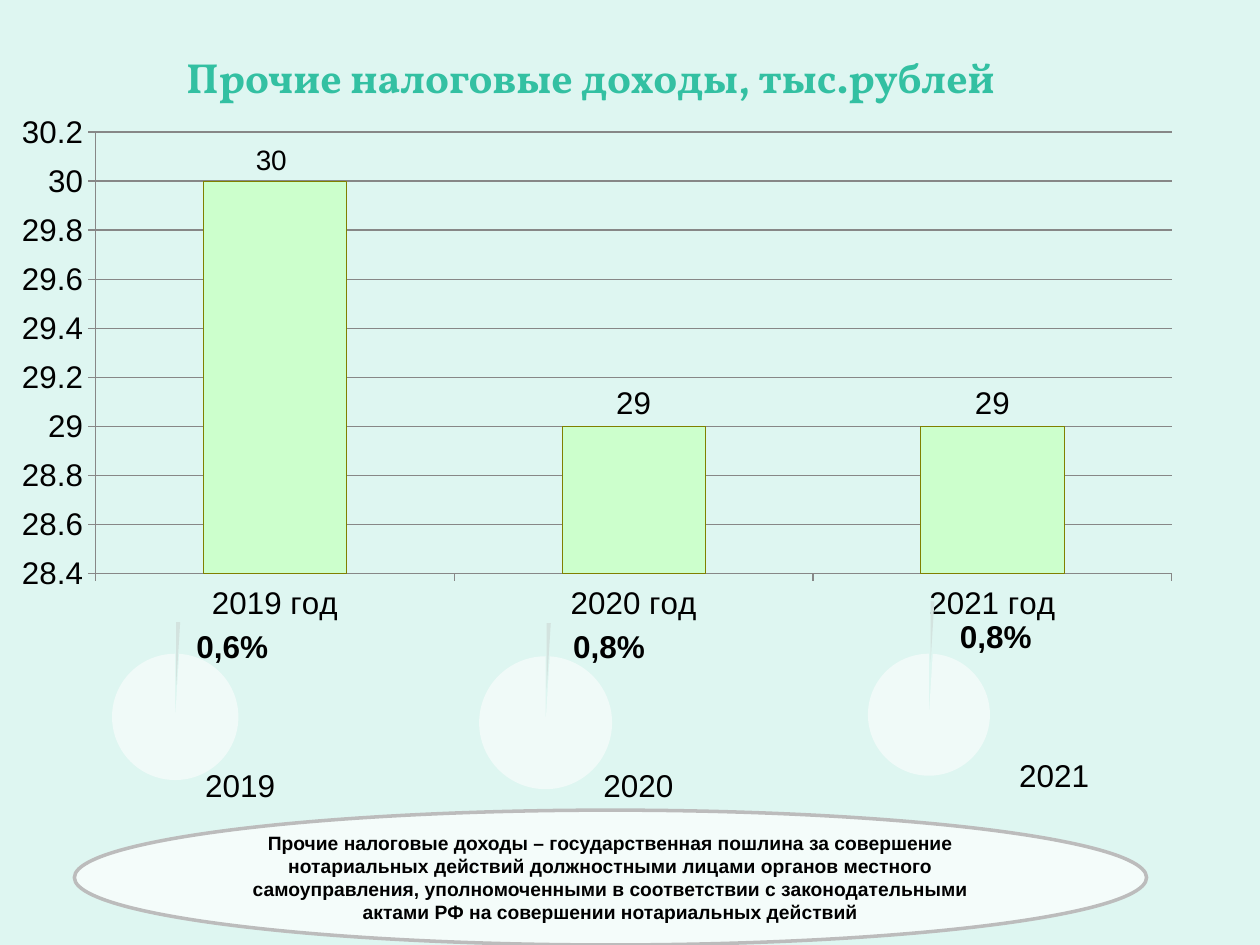
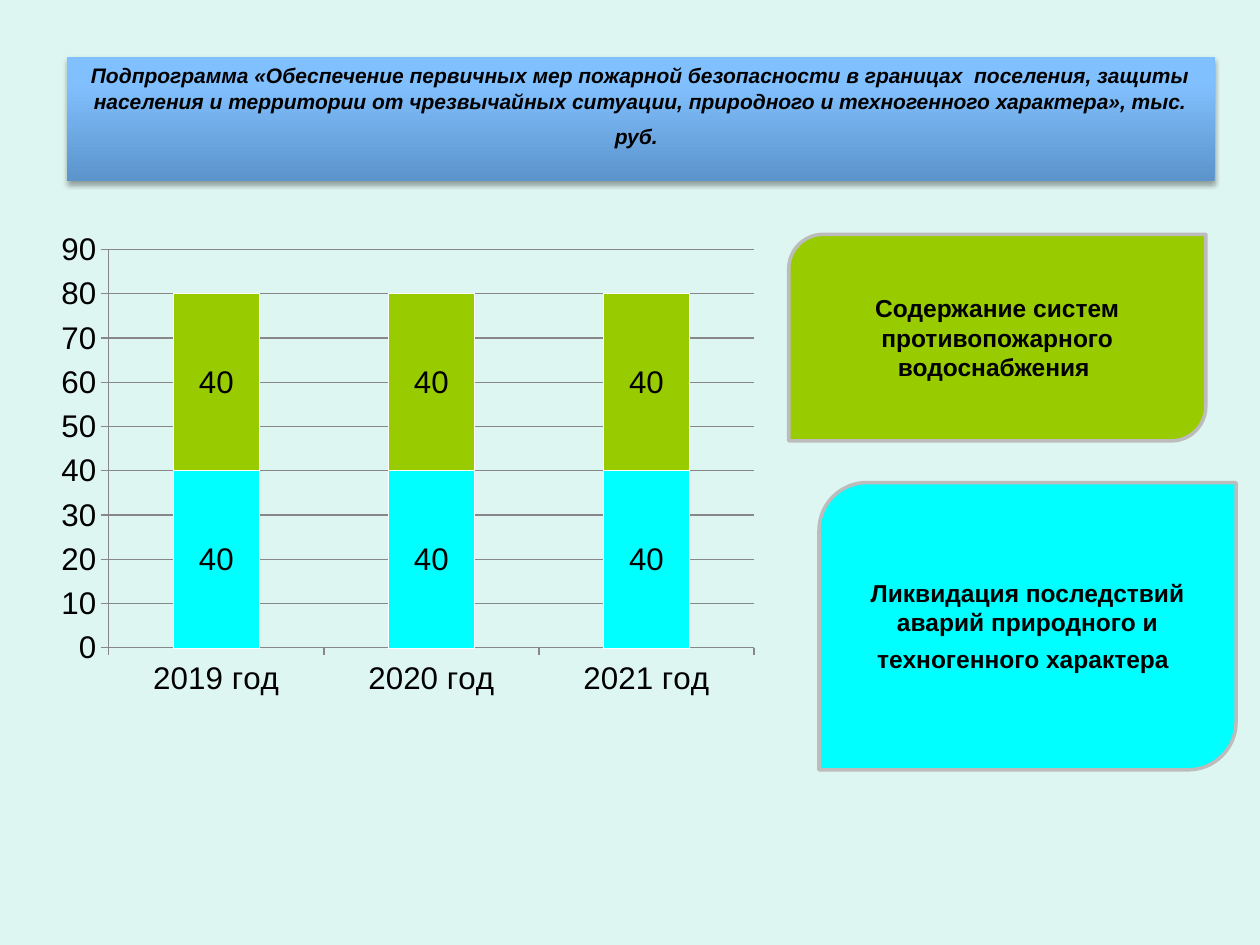
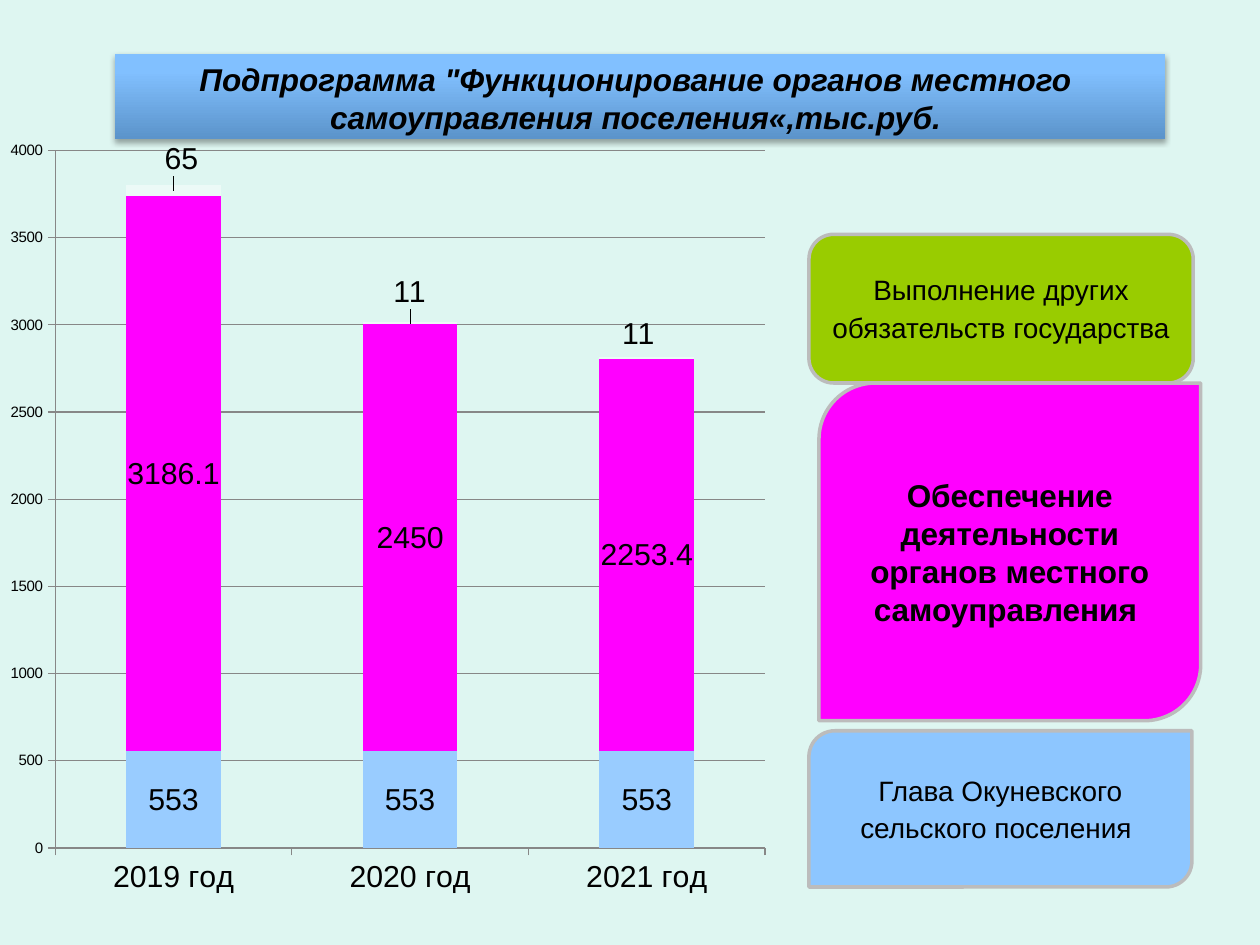
import lxml.etree
import pptx
import pptx.chart.data
import pptx.dml.color
import pptx.enum.chart
import pptx.enum.shapes
import pptx.enum.text
import pptx.oxml
import pptx.oxml.ns
import pptx.util

deck = pptx.Presentation()
deck.slide_width = pptx.util.Inches(10)
deck.slide_height = pptx.util.Inches(7.5)
column = deck.slide_width / 100
row = deck.slide_height / 75


def colour(code):
    return pptx.dml.color.RGBColor.from_string(code)


def place(left, top, width, height):
    return [int(left * column), int(top * row), int(width * column), int(height * row)]


qn = pptx.oxml.ns.qn
shapes = pptx.enum.shapes.MSO_SHAPE
align = pptx.enum.text.PP_ALIGN
anchor = pptx.enum.text.MSO_ANCHOR
chart_type = pptx.enum.chart.XL_CHART_TYPE
label_position = pptx.enum.chart.XL_LABEL_POSITION

BLACK, MINT, TEAL, WHITE = "000000", "DEF6F1", "33C0A2", "FFFFFF"
LIME, CYAN, MAGENTA, SKY = "99CC00", "00FFFF", "FF00FF", "8DC6FF"
BORDER, GRID = "BCBCBC", "878787"
YEARS = ["2019 год", "2020 год", "2021 год"]

background = deck.slide_master.background.fill
background.solid()
background.fore_color.rgb = colour(MINT)
other_taxes, fire_safety, local_government = [
    deck.slides.add_slide(deck.slide_layouts[6]) for _ in range(3)
]

column_charts = [
    dict(slide=other_taxes, area=(0, 8.4, 94.9, 41.7), kind=chart_type.COLUMN_CLUSTERED,
         plot=(0.08, 0.05, 0.9, 0.84), scale=(28.4, 30.2, 0.2), size=17.9, value_size=17.9,
         overlap=0, label=label_position.OUTSIDE_END,
         series=[([30, 29, 29], "CCFFCC", "808000")]),
    dict(slide=fire_safety, area=(0, 17.5, 61.7, 57.5), kind=chart_type.COLUMN_STACKED,
         plot=(0.14, 0.04, 0.83, 0.55), scale=(0, 90, 10), size=17.9, value_size=17.9,
         overlap=100, label=label_position.CENTER,
         series=[([40, 40, 40], CYAN, WHITE), ([40, 40, 40], LIME, WHITE)]),
    dict(slide=local_government, area=(0, 10.7, 62.6, 62.2), kind=chart_type.COLUMN_STACKED,
         plot=(0.07, 0.02, 0.9, 0.89), scale=(0, 4000, 500), size=17.3, value_size=8.6,
         overlap=100, label=label_position.CENTER,
         series=[([553, 553, 553], "99CCFF", None),
                 ([3186.1, 2450, 2253.4], MAGENTA, None),
                 ([65, 11, 11], "ECFAF7", None)]),
]
pie_charts = [
    dict(slide=other_taxes, area=area, kind=chart_type.PIE, size=18, explosion=explosion,
         plot=(0.5 - 0.41 * area[3] / area[2], 0.09, 0.82 * area[3] / area[2], 0.82))
    for area, explosion in [((-0.6, 48, 29.1, 15.3), 25),
                            ((24.3, 48, 38.1, 16.1), 25),
                            ((50.8, 46.2, 46, 16.9), 43)]
]

for spec in column_charts + pie_charts:
    is_pie = spec["kind"] == chart_type.PIE
    figures = pptx.chart.data.CategoryChartData()
    figures.categories = ["1", "2"] if is_pie else YEARS
    for number, values in enumerate([[1, 99]] if is_pie else [s[0] for s in spec["series"]], 1):
        figures.add_series(f"Series {number}", values)
    chart = spec["slide"].shapes.add_chart(spec["kind"], *place(*spec["area"]), figures).chart
    chart.has_legend = False
    chart.has_title = False
    for name, value in dict(name="Arial", size=pptx.util.Pt(spec["size"])).items():
        setattr(chart.font, name, value)
    chart.font.color.rgb = colour(BLACK)

    plot_area = chart.element.find(".//" + qn("c:plotArea"))
    for old_layout in plot_area.findall(qn("c:layout")):
        plot_area.remove(old_layout)
    layout = lxml.etree.Element(qn("c:layout"))
    manual = lxml.etree.SubElement(layout, qn("c:manualLayout"))
    for tag, value in zip(["layoutTarget", "xMode", "yMode", "x", "y", "w", "h"],
                          ["inner", "edge", "edge", *spec["plot"]]):
        lxml.etree.SubElement(manual, qn("c:" + tag)).set("val", str(value))
    plot_area.insert(0, layout)

    bars = chart.plots[0]
    bars.vary_by_categories = is_pie
    if is_pie:
        share = bars.series[0]
        for index, code in enumerate(["D3E3DF", "F0FAF8"]):
            wedge = share.points[index].format
            wedge.fill.solid()
            wedge.fill.fore_color.rgb = colour(code)
            wedge.line.fill.background()
        explosion = lxml.etree.Element(qn("c:explosion"))
        explosion.set("val", str(spec["explosion"]))
        chart.element.find(".//" + qn("c:dPt")).addprevious(explosion)
        continue

    bars.gap_width = 150
    bars.overlap = spec["overlap"]
    for series, (_, fill, outline) in zip(bars.series, spec["series"]):
        series.format.fill.solid()
        series.format.fill.fore_color.rgb = colour(fill)
        if outline:
            series.format.line.color.rgb = colour(outline)
            series.format.line.width = pptx.util.Pt(0.25)
        else:
            series.format.line.fill.background()
        for name, value in dict(show_value=True, position=spec["label"]).items():
            setattr(series.data_labels, name, value)
    low, high, step = spec["scale"]
    value_axis, year_axis = chart.value_axis, chart.category_axis
    for name, value in dict(minimum_scale=low, maximum_scale=high, major_unit=step,
                            has_major_gridlines=True).items():
        setattr(value_axis, name, value)
    value_axis.tick_labels.font.size = pptx.util.Pt(spec["value_size"])
    for axis in (value_axis, year_axis):
        axis.major_tick_mark = pptx.enum.chart.XL_TICK_MARK.OUTSIDE
    for part in (value_axis, year_axis, value_axis.major_gridlines):
        part.format.line.color.rgb = colour(GRID)
        part.format.line.width = pptx.util.Pt(0.75)
    spec["chart"] = chart

first_year_label = column_charts[0]["chart"].plots[0].series[0].points[0].data_label
first_year_label.text_frame.text = "30 "
first_year_label.text_frame.paragraphs[0].runs[0].font.size = pptx.util.Pt(16)
first_year_label.position = label_position.OUTSIDE_END

obligations = column_charts[2]["chart"].plots[0].series[2]
for index, shift in enumerate([(0.01, -0.04), (0, -0.04), (-0.01, -0.03)]):
    label = obligations.points[index].data_label
    label.font.size = pptx.util.Pt(17.3)
    label.position = label_position.CENTER
for entry, shift in zip(column_charts[2]["chart"].element.iter(qn("c:dLbl")),
                        [(0.01, -0.04), (0, -0.04), (-0.01, -0.03)]):
    layout = lxml.etree.Element(qn("c:layout"))
    manual = lxml.etree.SubElement(layout, qn("c:manualLayout"))
    for tag, value in zip("xy", shift):
        lxml.etree.SubElement(manual, qn("c:" + tag)).set("val", str(value))
    entry.find(qn("c:idx")).addnext(layout)

CAPTION = dict(shape=None, font="Arial", ink=BLACK, size=18, bold=False, italic=False,
               align=align.LEFT, anchor=anchor.TOP, fill=None, tail="")
TITLE = {**CAPTION, "font": "Vollkorn", "ink": TEAL, "size": 24, "bold": True}
PERCENT = {**CAPTION, "bold": True}
BANNER = {**CAPTION, "shape": shapes.RECTANGLE, "bold": True, "italic": True,
          "align": align.CENTER, "fill": "gradient"}
CARD = {**CAPTION, "shape": shapes.ROUND_2_DIAG_RECTANGLE, "align": align.CENTER,
        "anchor": anchor.MIDDLE, "border": BORDER}

texts = [
    (other_taxes, (13.8, 3.6, 72.5, 5), "Прочие налоговые доходы, тыс.рублей", TITLE),
    (other_taxes, (14.6, 49.3, 8, 4), "0,6%", PERCENT),
    (other_taxes, (44.5, 49.3, 11, 4), "0,8%", PERCENT),
    (other_taxes, (75.2, 48.5, 11, 4), "0,8%", PERCENT),
    (other_taxes, (15.3, 60.3, 9.5, 4), "2019", CAPTION),
    (other_taxes, (46.9, 60.3, 9.2, 4), "2020", CAPTION),
    (other_taxes, (79.9, 59.5, 8, 4), "2021", CAPTION),
    (other_taxes, (5.9, 64.3, 85.1, 10.7),
     "Прочие налоговые доходы – государственная пошлина за совершение нотариальных действий "
     "должностными лицами органов местного самоуправления, уполномоченными в соответствии с "
     "законодательными актами РФ на совершении нотариальных действий",
     {**CARD, "shape": shapes.OVAL, "size": 11, "bold": True, "fill": "F4FCFA"}),
    (fire_safety, (65, 38.3, 33.1, 22.8),
     "Ликвидация последствий аварий природного и техногенного характера",
     {**CARD, "size": 14, "bold": True, "fill": CYAN, "tail": " "}),
    (fire_safety, (62.6, 18.6, 33.1, 16.4),
     "Содержание систем противопожарного водоснабжения ",
     {**CARD, "size": 14, "bold": True, "fill": LIME}),
    (fire_safety, (5.3, 4.5, 91.1, 9.9),
     "Подпрограмма «Обеспечение первичных мер пожарной безопасности в границах  поселения, "
     "защиты населения и территории от чрезвычайных ситуации, природного и техногенного "
     "характера», тыс. руб.", {**BANNER, "size": 12, "tail": " "}),
    (local_government, (65, 30.4, 30.3, 26.8),
     "Обеспечение деятельности органов местного самоуправления ",
     {**CARD, "bold": True, "fill": MAGENTA}),
    (local_government, (64.2, 58, 30.4, 12.4), "Глава Окуневского сельского поселения",
     {**CARD, "size": 16, "fill": SKY, "tail": " "}),
    (local_government, (64.2, 18.6, 30.5, 11.8), "Выполнение других обязательств государства",
     {**CARD, "shape": shapes.ROUNDED_RECTANGLE, "size": 16, "fill": LIME, "tail": " "}),
    (local_government, (9.1, 4.3, 83.4, 6.7),
     "Подпрограмма \"Функционирование органов местного  самоуправления поселения«,тыс.руб. ",
     BANNER),
]

for slide, area, words, style in texts:
    if style["shape"] is None:
        block = slide.shapes.add_textbox(*place(*area))
    else:
        block = slide.shapes.add_shape(style["shape"], *place(*area))
        block.shadow.inherit = False
        if style["fill"] == "gradient":
            block.fill.gradient()
            block.fill.gradient_angle = 90
            for stop, position, code in zip(block.fill.gradient_stops, (0, 0.8),
                                            ("5C94CB", "81C0FF")):
                stop.position = position
                stop.color.rgb = colour(code)
            block.line.fill.background()
            effects = block.element.spPr.find(qn("a:effectLst"))
            shadow = lxml.etree.SubElement(effects, qn("a:outerShdw"))
            for name, value in dict(blurRad=pptx.util.Pt(3.1), dist=pptx.util.Pt(1.8),
                                    dir=5400000, rotWithShape=0).items():
                shadow.set(name, str(value))
            tint = lxml.etree.SubElement(shadow, qn("a:srgbClr"))
            tint.set("val", BLACK)
            lxml.etree.SubElement(tint, qn("a:alpha")).set("val", "35000")
        else:
            block.fill.solid()
            block.fill.fore_color.rgb = colour(style["fill"])
            block.line.color.rgb = colour(style["border"])
            block.line.width = pptx.util.Pt(2)
    frame = block.text_frame
    frame.word_wrap = True
    frame.vertical_anchor = style["anchor"]
    paragraph = frame.paragraphs[0]
    paragraph.alignment = style["align"]
    pieces = [(words, style["size"], style["bold"], style["italic"])]
    if style["tail"]:
        pieces.append((style["tail"], 18, False, False))
    for piece, size, bold, italic in pieces:
        run = paragraph.add_run()
        run.text = piece
        run.font.color.rgb = colour(style["ink"])
        for name, value in dict(name=style["font"], size=pptx.util.Pt(size),
                                bold=bold, italic=italic).items():
            setattr(run.font, name, value)

deck.save("out.pptx")
